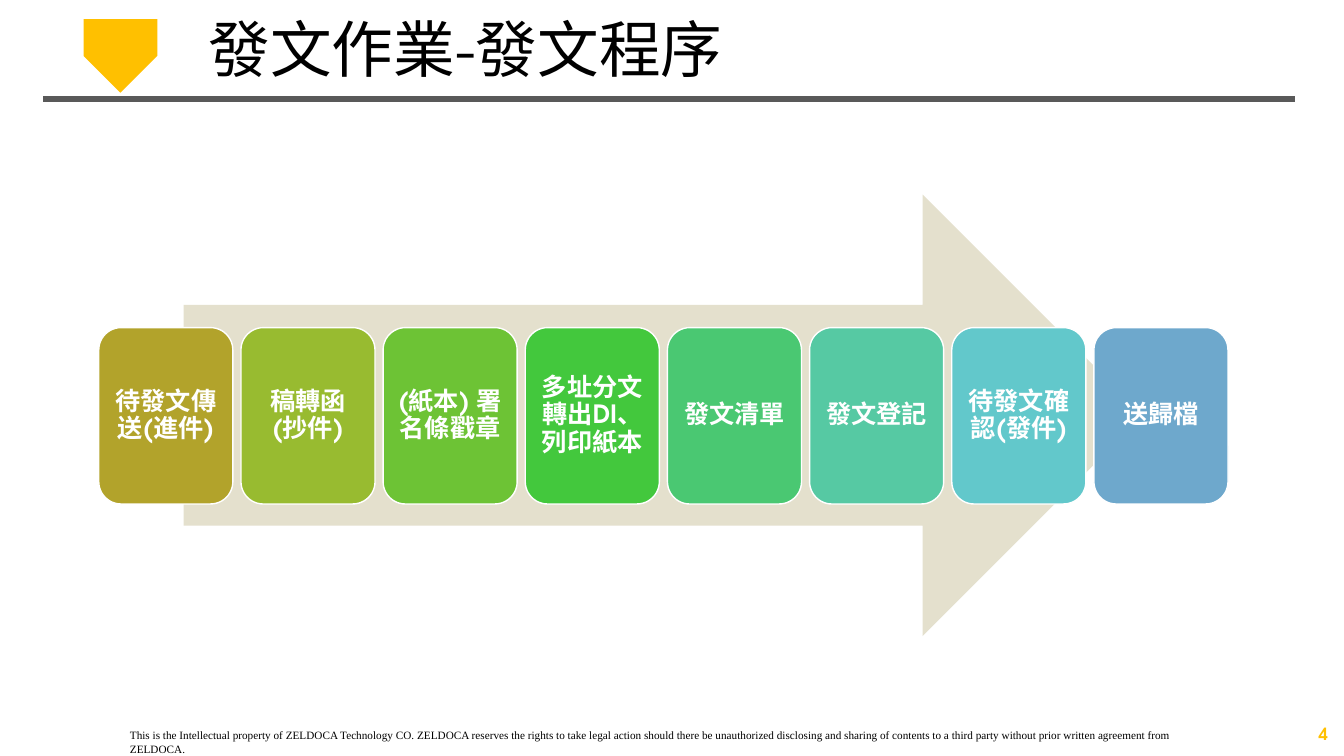
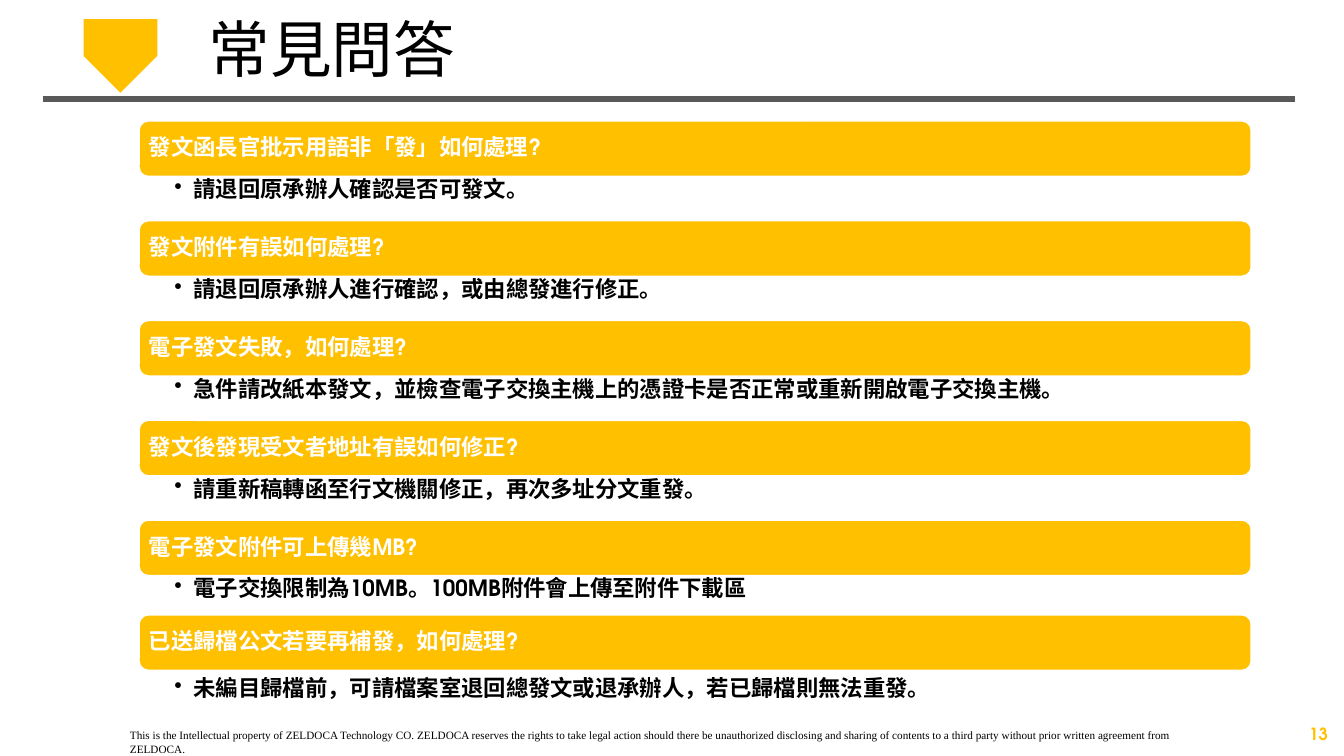
import dataclasses
import typing

import lxml.etree
import pptx
import pptx.dml.color
import pptx.enum.shapes
import pptx.enum.text
import pptx.oxml.ns
import pptx.util

Inches = pptx.util.Inches
MSO_SHAPE = pptx.enum.shapes.MSO_SHAPE
PP_ALIGN = pptx.enum.text.PP_ALIGN
MSO_ANCHOR = pptx.enum.text.MSO_ANCHOR

FONT = "TeX Gyre Adventor"
FOOTER_FONT = "Times New Roman"
GOLD = "FFC000"
GRAY = "595959"
BEIGE = "E4E0CD"
WHITE = "FFFFFF"
BLACK = "000000"
FOOTER = (
    "This is the Intellectual property of ZELDOCA Technology CO. ZELDOCA reserves "
    "the rights to take legal action should there be unauthorized disclosing and "
    "sharing of contents to a third party without prior written agreement from ZELDOCA."
)
STEP_PITCH = 1.41
FAQ_PITCH = 0.99
BAR_HEIGHT = 0.55


@dataclasses.dataclass(frozen=True)
class Box:
    left: float
    top: float
    width: float
    height: float

    def lengths(self) -> tuple:
        return tuple(map(Inches, dataclasses.astuple(self)))


@dataclasses.dataclass(frozen=True)
class TextStyle:
    size: float
    color: str
    bold: bool = True
    font: str = FONT
    align: PP_ALIGN = PP_ALIGN.LEFT
    anchor: MSO_ANCHOR = MSO_ANCHOR.MIDDLE
    spacing: float = 0.9
    insets: tuple[float, float, float, float] = (0.1, 0.05, 0.1, 0.05)


@dataclasses.dataclass(frozen=True)
class Step:
    text: str
    color: str


@dataclasses.dataclass(frozen=True)
class Faq:
    question: str
    answer: str
    bar_shift: float = 0


TIGHT = (0.07, 0.07, 0.07, 0.07)
TITLE = TextStyle(44, BLACK, bold=False)
FOOTER_TEXT = TextStyle(8, BLACK, bold=False, font=FOOTER_FONT,
                        anchor=MSO_ANCHOR.TOP, spacing=1)
PAGE_NUMBER = TextStyle(12, GOLD, align=PP_ALIGN.RIGHT, spacing=1)
STEP_TEXT = TextStyle(18, WHITE, align=PP_ALIGN.CENTER, insets=TIGHT)
QUESTION = TextStyle(16, WHITE, insets=TIGHT)
ANSWER = TextStyle(16, BLACK, anchor=MSO_ANCHOR.TOP, insets=(0.35, 0.02, 0.12, 0.02))

STEPS = [
    Step("待發文傳送(進件)", "B2A32B"),
    Step("稿轉函 (抄件)", "98BB30"),
    Step("(紙本) 署名條戳章", "6DC335"),
    Step("多址分文轉出DI、列印紙本", "43C83D"),
    Step("發文清單", "4AC872"),
    Step("發文登記", "56C9A3"),
    Step("待發文確認(發件)", "62C8CB"),
    Step("送歸檔", "6EA8CC"),
]

FAQS = [
    Faq("發文函長官批示用語非「發」如何處理?", "請退回原承辦人確認是否可發文。"),
    Faq("發文附件有誤如何處理?", "請退回原承辦人進行確認，或由總發進行修正。"),
    Faq("電子發文失敗，如何處理?",
        "急件請改紙本發文，並檢查電子交換主機上的憑證卡是否正常或重新開啟電子交換主機。"),
    Faq("發文後發現受文者地址有誤如何修正?",
        "請重新稿轉函至行文機關修正，再次多址分文重發。"),
    Faq("電子發文附件可上傳幾MB?", "電子交換限制為10MB。100MB附件會上傳至附件下載區"),
    Faq("已送歸檔公文若要再補發，如何處理?",
        "未編目歸檔前，可請檔案室退回總發文或退承辦人，若已歸檔則無法重發。",
        bar_shift=-0.05),
]


def rgb(color: str) -> pptx.dml.color.RGBColor:
    return pptx.dml.color.RGBColor.from_string(color)


def write(sp: typing.Any, text: str, style: TextStyle, bullet: bool = False) -> None:
    tf = sp.text_frame
    tf.text = text
    tf.word_wrap = True
    tf.auto_size = pptx.enum.text.MSO_AUTO_SIZE.NONE
    tf.vertical_anchor = style.anchor
    (tf.margin_left, tf.margin_top,
     tf.margin_right, tf.margin_bottom) = map(Inches, style.insets)
    p = tf.paragraphs[0]
    if bullet:
        pPr = p._p.get_or_add_pPr()
        indent = Inches(0.19)
        pPr.set("marL", str(indent))
        pPr.set("indent", str(-indent))
        bu = lxml.etree.SubElement(pPr, pptx.oxml.ns.qn("a:buChar"))
        bu.set("char", "•")
    p.alignment = style.align
    p.line_spacing = style.spacing
    for r in p.runs:
        r.font.name = style.font
        r.font.size = pptx.util.Pt(style.size)
        r.font.bold = style.bold
        r.font.color.rgb = rgb(style.color)


def add_text(s: typing.Any, box: Box, text: str, style: TextStyle,
             bullet: bool = False) -> None:
    write(s.shapes.add_textbox(*box.lengths()), text, style, bullet)


def add_shape(s: typing.Any, kind: MSO_SHAPE, box: Box, fill: str,
              line: str | None = None) -> typing.Any:
    sp = s.shapes.add_shape(kind, *box.lengths())
    sp.shadow.inherit = False
    sp.fill.solid()
    sp.fill.fore_color.rgb = rgb(fill)
    if line:
        sp.line.color.rgb = rgb(line)
        sp.line.width = pptx.util.Pt(1)
    else:
        sp.line.fill.background()
    return sp


def add_rule(s: typing.Any, left: float, right: float, top: float) -> None:
    rule = s.shapes.add_connector(pptx.enum.shapes.MSO_CONNECTOR.STRAIGHT,
                                  Inches(left), Inches(top), Inches(right), Inches(top))
    rule.line.color.rgb = rgb(GRAY)
    rule.line.width = pptx.util.Pt(4.5)
    lxml.etree.SubElement(rule._element.spPr, pptx.oxml.ns.qn("a:effectLst"))


def add_slide(prs: typing.Any, title: str, title_width: float, number: int) -> typing.Any:
    s = prs.slides.add_slide(prs.slide_layouts[5])
    badge = add_shape(s, MSO_SHAPE.SNIP_2_SAME_RECTANGLE, Box(0.83, 0.19, 0.73, 0.73), GOLD)
    badge.adjustments[0] = 0.5
    badge.adjustments[1] = 0
    badge.rotation = 180
    add_text(s, Box(1.19, 7.18, 11.11, 0.24), FOOTER, FOOTER_TEXT)
    add_rule(s, 0.43, 12.84, 0.98)
    sp = s.shapes.title
    sp.left, sp.top, sp.width, sp.height = Box(1.97, 0.19, title_width, 0.66).lengths()
    write(sp, title, TITLE)
    add_text(s, Box(10.27, 7.08, 3, 0.4), str(number), PAGE_NUMBER)
    return s


def add_process(s: typing.Any) -> None:
    add_shape(s, MSO_SHAPE.RIGHT_ARROW, Box(1.82, 1.93, 9.52, 4.38), BEIGE)
    for i, step in enumerate(STEPS):
        box = Box(0.98 + i * STEP_PITCH, 3.25, 1.33, 1.75)
        sp = add_shape(s, MSO_SHAPE.ROUNDED_RECTANGLE, box, step.color, WHITE)
        write(sp, step.text, STEP_TEXT)


def add_faqs(s: typing.Any) -> None:
    for i, faq in enumerate(FAQS):
        top = 1.2 + i * FAQ_PITCH
        bar = Box(1.38, top + faq.bar_shift, 11.03, BAR_HEIGHT)
        sp = add_shape(s, MSO_SHAPE.ROUNDED_RECTANGLE, bar, GOLD, WHITE)
        write(sp, faq.question, QUESTION)
        add_text(s, Box(1.38, top + BAR_HEIGHT, 11.03, 0.43), faq.answer, ANSWER, bullet=True)


def main() -> None:
    prs = pptx.Presentation()
    prs.slide_width = Inches(13.33)
    prs.slide_height = Inches(7.5)
    add_process(add_slide(prs, "發文作業-發文程序", 10.21, 4))
    add_faqs(add_slide(prs, "常見問答", 4.2, 13))
    prs.save("out.pptx")


if __name__ == "__main__":
    main()
